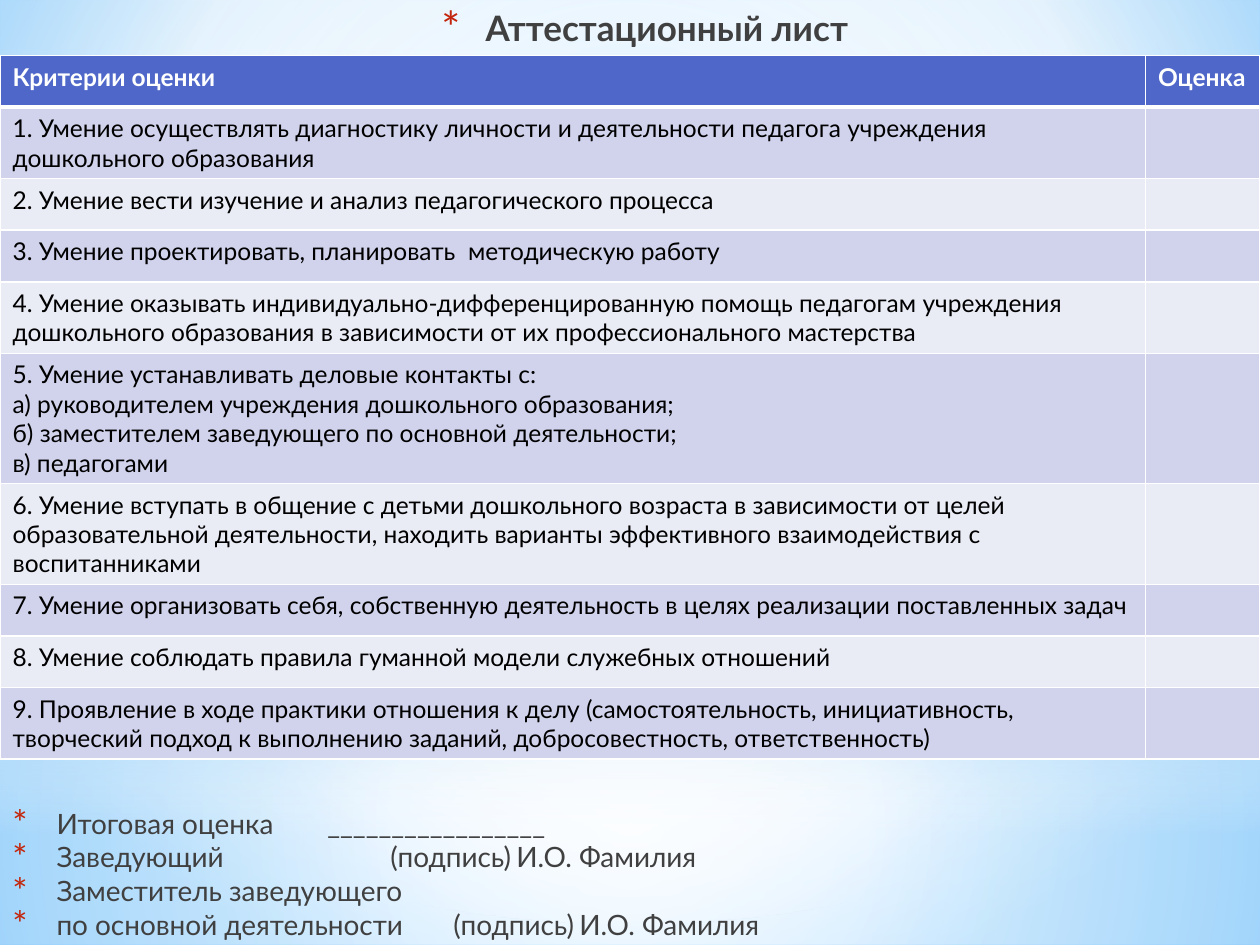
from pptx import Presentation
from pptx.dml.color import RGBColor
from pptx.enum.shapes import MSO_SHAPE as Shape
from pptx.enum.text import MSO_ANCHOR as Anchor, MSO_AUTO_SIZE as AutoSize, PP_ALIGN as Align
from pptx.oxml import parse_xml
from pptx.oxml.ns import nsdecls, qn
from pptx.util import Cm, Pt

FONT = "Lato"
WHITE = RGBColor(0xFF, 0xFF, 0xFF)
BLACK = RGBColor(0x00, 0x00, 0x00)
DARK_GREY = RGBColor(0x40, 0x40, 0x40)
RED = RGBColor(0xC3, 0x26, 0x0C)
PALE_BLUE = RGBColor(0xB4, 0xDC, 0xFA)
SKY = RGBColor(0x9E, 0xD5, 0xFF)
DEEP_SKY = RGBColor(0x5B, 0xB9, 0xFF)
HEADER_BLUE = RGBColor(0x4E, 0x67, 0xC8)
BAND_DARK = RGBColor(0xD0, 0xD3, 0xEB)
BAND_LIGHT = RGBColor(0xE9, 0xEB, 0xF5)


def set_gradient(owner, fill, stops, focus):
    """Fill with (position, colour, opacity) stops, round a focus or downwards."""
    stop_xml = "".join(
        f'<a:gs pos="{pos * 1000}"><a:srgbClr val="{color}">'
        f'<a:alpha val="{opacity * 1000}"/></a:srgbClr></a:gs>'
        for pos, color, opacity in stops)
    if focus:
        left, top, right, bottom = (side * 1000 for side in focus)
        direction = (f'<a:path path="circle"><a:fillToRect l="{left}" t="{top}" '
                     f'r="{right}" b="{bottom}"/></a:path>')
    else:
        direction = '<a:lin ang="5400000" scaled="0"/>'
    fill.solid()
    solid = owner.find(".//" + qn("a:solidFill"))
    solid.getparent().replace(solid, parse_xml(
        f'<a:gradFill {nsdecls("a")} rotWithShape="1"><a:gsLst>{stop_xml}</a:gsLst>'
        f'{direction}</a:gradFill>'))


def add_starred_text(paragraph, text, size, align, bold=False):
    paragraph.alignment = align
    paragraph.line_spacing = 1.0
    paragraph.space_before = paragraph.space_after = Pt(0)
    props = paragraph._p.get_or_add_pPr()
    props.set("marL", str(Cm(0.89)))
    props.set("indent", str(-Cm(0.89)))
    for bullet in (f'<a:buClr {nsdecls("a")}><a:srgbClr val="{RED}"/></a:buClr>',
                   f'<a:buSzPct {nsdecls("a")} val="128000"/>',
                   f'<a:buFont {nsdecls("a")} typeface="{FONT}"/>',
                   f'<a:buChar {nsdecls("a")} char="*"/>'):
        props.append(parse_xml(bullet))
    run = paragraph.add_run()
    run.text = text
    run.font.name, run.font.size, run.font.bold = FONT, Pt(size), bold
    run.font.color.rgb = DARK_GREY


prs = Presentation()
prs.slide_width, prs.slide_height = Cm(25.4), Cm(19.05)
slide = prs.slides.add_slide(prs.slide_layouts[5])

# Background and soft light areas
set_gradient(slide.element, slide.background.fill,
             [(0, SKY, 100), (60, WHITE, 100), (100, DEEP_SKY, 100)], (20, 10, 20, 60))
CENTRE = (50, 50, 50, 50)
lights = [
    (Shape.RECTANGLE, 14.17, 4.88, CENTRE,
     [(0, WHITE, 91), (37, WHITE, 76), (100, PALE_BLUE, 79)]),
    (Shape.RECTANGLE, 0, 14.17, CENTRE,
     [(0, WHITE, 89), (48, WHITE, 62), (100, PALE_BLUE, 79)]),
    (Shape.RECTANGLE, 10.46, 6.35, None,
     [(0, WHITE, 0), (29, WHITE, 30), (45, PALE_BLUE, 40),
      (55, WHITE, 26), (65, PALE_BLUE, 60), (100, WHITE, 0)]),
    (Shape.OVAL, 4.45, 14.17, CENTRE, [(0, WHITE, 100), (56, WHITE, 0)]),
]
for outline, top, height, focus, stops in lights:
    light = slide.shapes.add_shape(outline, 0, Cm(top), Cm(25.4), Cm(height))
    light.shadow.inherit = False
    light.line.fill.background()
    set_gradient(light._element, light.fill, stops, focus)

# Title, in front of the light areas
title = slide.shapes.title
slide.shapes._spTree.append(title._element)
title.left, title.top, title.width, title.height = Cm(0.3), 0, Cm(25.4), Cm(0.91)
title.text_frame.auto_size = AutoSize.NONE
title.text_frame.vertical_anchor = Anchor.TOP
add_starred_text(title.text_frame.paragraphs[0], "Аттестационный лист", 20, Align.CENTER, True)

# Criteria table: each row is a list of paragraphs, the mark column stays empty
criteria = [
    ["1. Умение осуществлять диагностику личности и деятельности педагога учреждения "
     "дошкольного образования"],
    ["2. Умение вести изучение и анализ педагогического процесса"],
    ["3. Умение проектировать, планировать  методическую работу"],
    ["4. Умение оказывать индивидуально-дифференцированную помощь педагогам учреждения "
     "дошкольного образования в зависимости от их профессионального мастерства"],
    ["5. Умение устанавливать деловые контакты с:",
     "а) руководителем учреждения дошкольного образования;",
     "б) заместителем заведующего по основной деятельности;",
     "в) педагогами"],
    ["6. Умение вступать в общение с детьми дошкольного возраста в зависимости от целей "
     "образовательной деятельности, находить варианты эффективного взаимодействия с "
     "воспитанниками"],
    ["7. Умение организовать себя, собственную деятельность в целях реализации "
     "поставленных задач"],
    ["8. Умение соблюдать правила гуманной модели служебных отношений"],
    ["9. Проявление в ходе практики отношения к делу (самостоятельность, инициативность, "
     "творческий подход к выполнению заданий, добросовестность, ответственность)"],
]
rows = [(["Критерии оценки"], ["Оценка"])] + [(criterion, []) for criterion in criteria]
row_height = Cm(1.04)
table = slide.shapes.add_table(len(rows), 2, 0, Cm(1.12), Cm(25.4), row_height * len(rows)).table
table.columns[0].width, table.columns[1].width = Cm(23.09), Cm(2.31)
for r, row in enumerate(rows):
    table.rows[r].height = row_height
    is_header = r == 0
    for c, lines in enumerate(row):
        cell = table.cell(r, c)
        cell_props = cell._tc.get_or_add_tcPr()
        for side in ("L", "R", "T", "B"):
            thick = (is_header and side == "B") or (r == 1 and side == "T")
            cell_props.append(parse_xml(
                f'<a:ln{side} {nsdecls("a")} w="{Pt(3 if thick else 1)}"><a:solidFill>'
                f'<a:srgbClr val="{WHITE}"/></a:solidFill></a:ln{side}>'))
        cell.fill.solid()
        cell.fill.fore_color.rgb = HEADER_BLUE if is_header else BAND_DARK if r % 2 else BAND_LIGHT
        for i, line in enumerate(lines):
            paragraph = cell.text_frame.add_paragraph() if i else cell.text_frame.paragraphs[0]
            run = paragraph.add_run()
            run.text = line
            run.font.name, run.font.size, run.font.bold = FONT, Pt(14), is_header
            run.font.color.rgb = WHITE if is_header else BLACK

# Final mark and signatures
signatures = slide.shapes.add_textbox(0, Cm(16.13), Cm(25.4), Cm(2.92)).text_frame
signatures.word_wrap = True
for i, line in enumerate(["Итоговая оценка\t_________________",
                          "Заведующий \t\t\t(подпись)\tИ.О. Фамилия",
                          "Заместитель заведующего",
                          "по основной деятельности\t(подпись)\tИ.О. Фамилия"]):
    paragraph = signatures.add_paragraph() if i else signatures.paragraphs[0]
    add_starred_text(paragraph, line, 16, Align.JUSTIFY)

prs.save("out.pptx")
